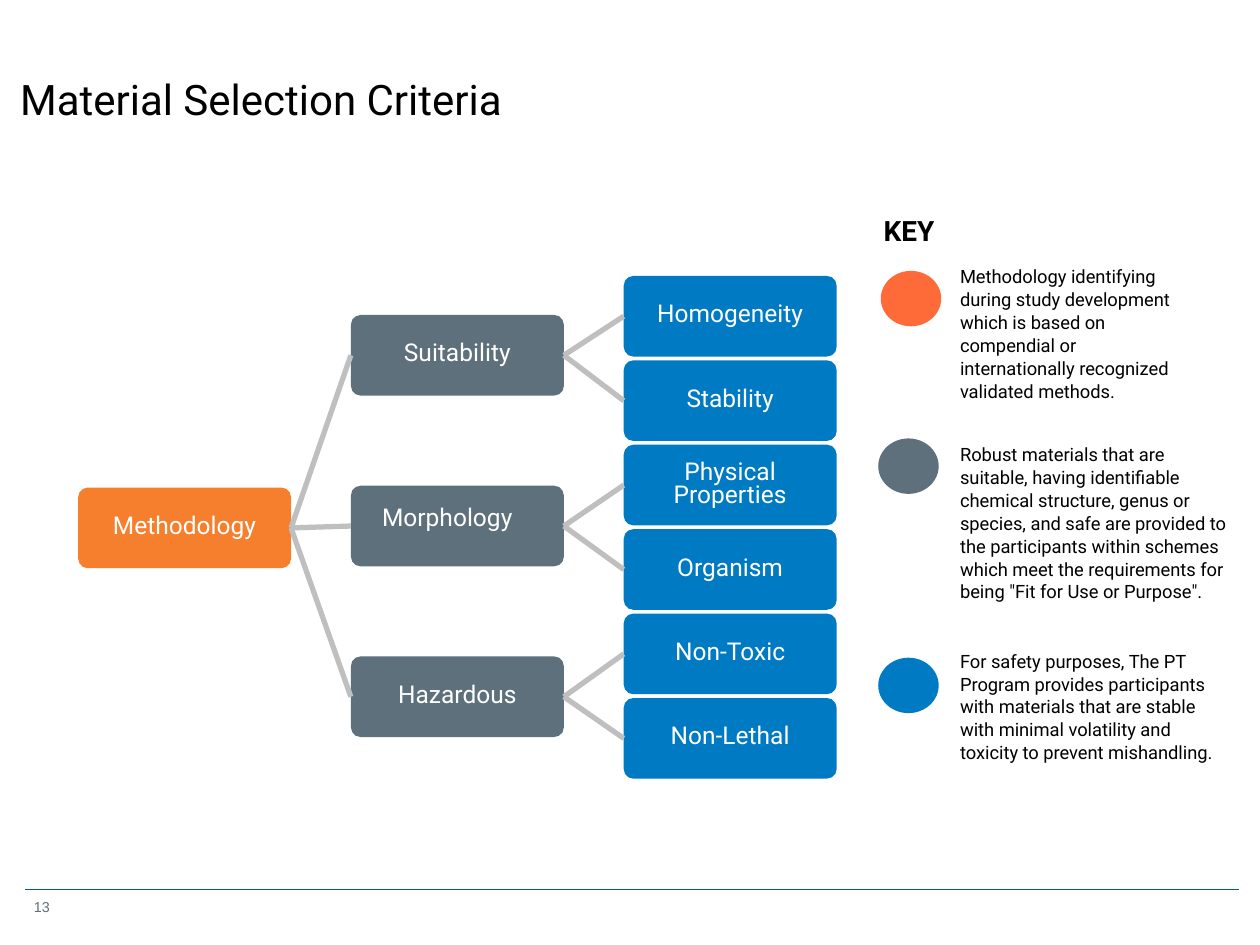
from dataclasses import dataclass

from pptx import Presentation
from pptx.dml.color import RGBColor as Rgb
from pptx.enum.shapes import MSO_CONNECTOR as Connector, MSO_SHAPE as Preset
from pptx.enum.text import MSO_ANCHOR as Anchor, PP_ALIGN as Align
from pptx.oxml.ns import qn
from pptx.util import Inches, Pt
from lxml.etree import SubElement


@dataclass(frozen=True)
class Theme:
    font: str = "Roboto"
    number_font: str = "Arial"
    black: str = "000000"
    white: str = "FFFFFF"
    orange: str = "F57F2D"
    coral: str = "FF6A39"
    slate: str = "5E707B"
    blue: str = "007AC2"
    branch_line: str = "BFBFBF"
    footer_line: str = "005C92"
    title_size: float = 24
    key_size: float = 16
    node_size: float = 14
    note_size: float = 10.5
    number_size: float = 8.2
    line_pitch: float = 13.1


@dataclass(frozen=True)
class Node:
    label: str
    column: int
    top: float
    color: str
    right_inset: float = 0.03
    bottom_inset: float = 0.03


@dataclass(frozen=True)
class KeyEntry:
    color: str
    dot_left: float
    dot_top: float
    note_top: float
    note_width: float
    note_height: float
    note: str


THEME = Theme()
COLUMN_LEFT, COLUMN_STEP = 0.62, 2.165
NODE_WIDTH, NODE_HEIGHT = 1.69, 0.64
BRANCH_TOP, BRANCH_STEP = 2.5, 1.355
LEAF_TOP, LEAF_STEP = 2.19, 0.67

BRANCHES = {
    "Suitability": ("Homogeneity", "Stability"),
    "Morphology": ("Physical Properties", "Organism"),
    "Hazardous": ("Non-Toxic", "Non-Lethal"),
}

KEY_ENTRIES = (
    KeyEntry(THEME.coral, 6.99, 2.15, 2.08, 1.9, 1.12,
             "Methodology identifying during study development which is based on "
             "compendial or internationally recognized validated methods."),
    KeyEntry(THEME.slate, 6.97, 3.48, 3.49, 2.26, 1.3,
             "Robust materials that are suitable, having identifiable chemical structure, "
             "genus or species, and safe are provided to the participants within schemes "
             'which meet the requirements for being "Fit for Use or Purpose".'),
    KeyEntry(THEME.blue, 6.97, 5.22, 5.13, 2.16, 1.12,
             "For safety purposes, The PT Program provides participants with materials "
             "that are stable with minimal volatility and toxicity to prevent mishandling."),
)


def write(shape, text: str, size: float, color: str, align=Align.LEFT,
          anchor=Anchor.TOP, insets=(0.1, 0.05, 0.1, 0.05), pitch=None,
          font: str = THEME.font, bold: bool = False, wrap: bool = True) -> None:
    frame = shape.text_frame
    frame.text = text
    frame.word_wrap = wrap
    frame.vertical_anchor = anchor
    (frame.margin_left, frame.margin_top,
     frame.margin_right, frame.margin_bottom) = map(Inches, insets)
    paragraph = frame.paragraphs[0]
    paragraph.alignment = align
    if pitch:
        paragraph.line_spacing = Pt(pitch)
    for run in paragraph.runs:
        run.font.name = font
        run.font.size = Pt(size)
        run.font.bold = bold
        run.font.color.rgb = Rgb.from_string(color)


def add_filled(slide, preset, left: float, top: float, width: float, height: float,
               color: str):
    shape = slide.shapes.add_shape(preset, *map(Inches, (left, top, width, height)))
    shape.shadow.inherit = False
    shape.fill.solid()
    shape.fill.fore_color.rgb = Rgb.from_string(color)
    shape.line.fill.background()
    return shape


def add_text(slide, left: float, top: float, width: float, height: float,
             text: str, size: float, color: str, **style) -> None:
    box = slide.shapes.add_textbox(*map(Inches, (left, top, width, height)))
    write(box, text, size, color, **style)


def add_line(slide, ends: tuple, color: str, weight: float):
    line = slide.shapes.add_connector(Connector.STRAIGHT, *map(Inches, ends))
    line.line.color.rgb = Rgb.from_string(color)
    line.line.width = Pt(weight)
    SubElement(line._element.spPr, qn("a:effectLst"))
    return line


def add_node(slide, node: Node):
    left = COLUMN_LEFT + COLUMN_STEP * node.column
    shape = add_filled(slide, Preset.ROUNDED_RECTANGLE, left, node.top,
                       NODE_WIDTH, NODE_HEIGHT, node.color)
    shape.adjustments[0] = 0.12
    write(shape, node.label, THEME.node_size, THEME.white, align=Align.CENTER,
          anchor=Anchor.MIDDLE, pitch=THEME.line_pitch,
          insets=(0.03, 0.03, node.right_inset, node.bottom_inset))
    return shape


def join(slide, parent, child) -> None:
    branch = add_line(slide, (0, 0, 0, 0), THEME.branch_line, 3)
    branch.begin_connect(parent, 3)
    branch.end_connect(child, 1)


def add_tree(slide) -> None:
    root = add_node(slide, Node("Methodology", 0, 3.87, THEME.orange))
    for row, (label, leaves) in enumerate(BRANCHES.items()):
        insets = (0.19, 0.12) if label == "Morphology" else (0.03, 0.03)
        branch = add_node(slide, Node(label, 1, BRANCH_TOP + BRANCH_STEP * row,
                                      THEME.slate, *insets))
        join(slide, root, branch)
        for leaf_row, leaf_label in enumerate(leaves, start=row * len(leaves)):
            leaf = add_node(slide, Node(leaf_label, 2, LEAF_TOP + LEAF_STEP * leaf_row,
                                        THEME.blue))
            join(slide, branch, leaf)


def add_key(slide) -> None:
    add_text(slide, 6.91, 1.65, 0.61, 0.35, "KEY", THEME.key_size, THEME.black,
             align=Align.CENTER, anchor=Anchor.MIDDLE, bold=True, wrap=False,
             insets=(0.08, 0.04, 0.08, 0.04))
    for entry in KEY_ENTRIES:
        add_filled(slide, Preset.OVAL, entry.dot_left, entry.dot_top, 0.48, 0.44,
                   entry.color)
        add_text(slide, 7.58, entry.note_top, entry.note_width, entry.note_height,
                 entry.note, THEME.note_size, THEME.black,
                 pitch=THEME.line_pitch, insets=(0.04, 0.02, 0.04, 0.02))


def main() -> None:
    deck = Presentation()
    deck.slide_width, deck.slide_height = Inches(10), Inches(7.5)
    slide = deck.slides.add_slide(deck.slide_layouts[5])

    title = slide.shapes.title
    title.left, title.top, title.width, title.height = map(Inches, (0.06, 0.53, 5.09, 0.52))
    write(title, "Material Selection Criteria", THEME.title_size, THEME.black)

    add_tree(slide)
    add_key(slide)
    add_line(slide, (0.2, 7.06, 9.83, 7.06), THEME.footer_line, 0.75)
    add_text(slide, 0.17, 7.08, 0.42, 0.24, "13", THEME.number_size, THEME.slate,
             font=THEME.number_font)
    deck.save("out.pptx")


if __name__ == "__main__":
    main()
